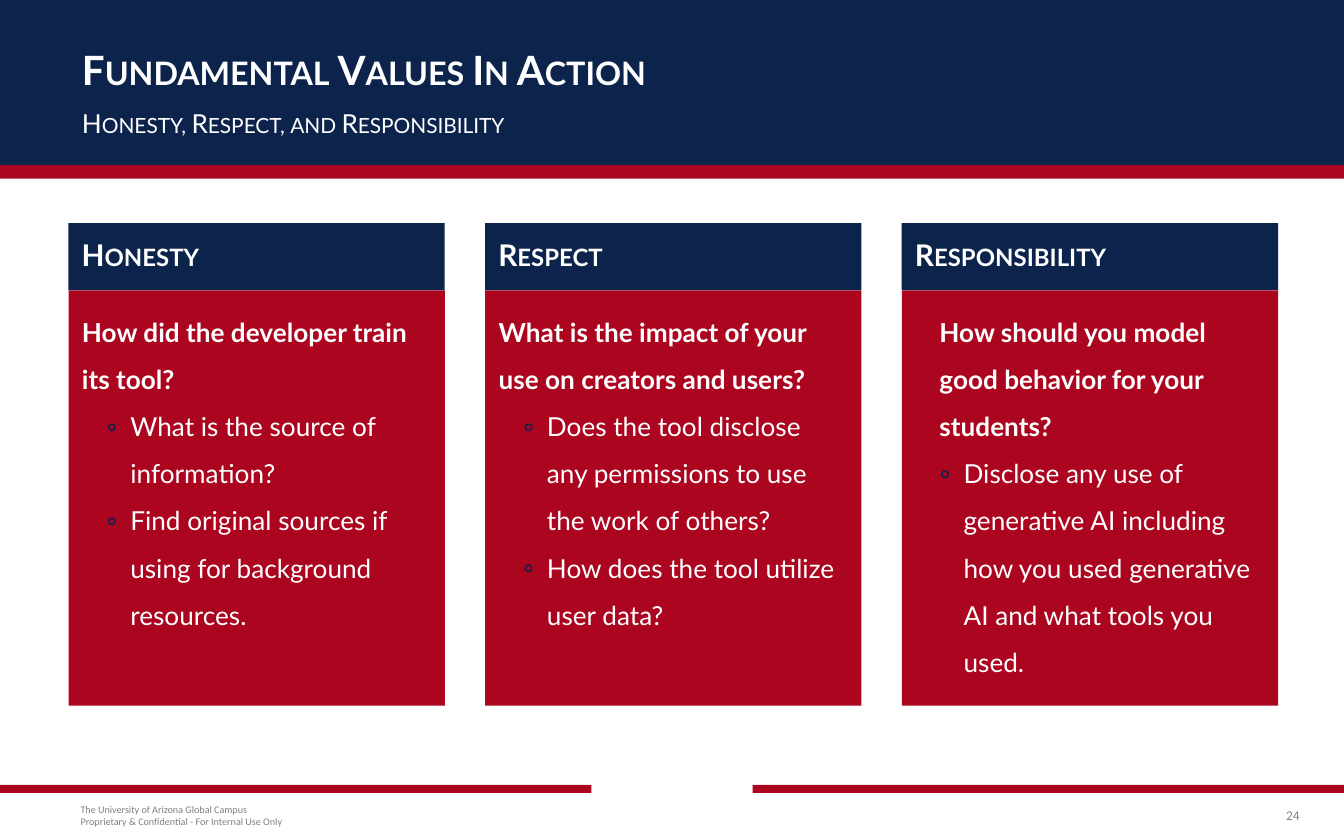
import pptx
import pptx.util
import pptx.dml.color
import pptx.enum.shapes
import pptx.enum.text
import pptx.oxml
import pptx.oxml.ns

Inches, Pt = pptx.util.Inches, pptx.util.Pt
ALIGN, ANCHOR = pptx.enum.text.PP_ALIGN, pptx.enum.text.MSO_ANCHOR

# Content
TITLE = "Fundamental Values In Action"
SUBTITLE = "Honesty, Respect, and Responsibility"
# heading, question, points, indent of the question
COLUMNS = [
    ("Honesty", "How did the developer train its tool?",
     ["What is the source of information?",
      "Find original sources if using for background resources."], 0),
    ("Respect", "What is the impact of your use on creators and users?",
     ["Does the tool disclose any permissions to use the work of others?",
      "How does the tool utilize user data?"], 0),
    ("Responsibility", "How should you model good behavior for your students?",
     ["Disclose any use of generative AI including how you used generative AI "
      "and what tools you used."], 0.18),
]
FOOTER = ("The University of Arizona Global Campus\v"
          "Proprietary & Confidential - For Internal Use Only")
PAGE = "24"

# Format
COLORS = {"navy": "0C234B", "red": "AB0520", "white": "FFFFFF", "gray": "808080"}
STYLES = {
    "title": {"name": "Lato", "size": Pt(21.6), "bold": True},
    "subtitle": {"name": "Lato", "size": Pt(14), "bold": False},
    "heading": {"name": "Lato", "size": Pt(16), "bold": True},
    "question": {"name": "Lato", "size": Pt(14), "bold": True},
    "point": {"name": "Lato", "size": Pt(14), "bold": False},
    "footer": {"name": "Calibri", "size": Pt(5.4)},
    "page": {"name": "Calibri", "size": Pt(7.2)},
}
SMALL_CAPS = ("title", "subtitle", "heading")

# Grid
W, H = 10, 6.25
LEFT, COL_W, PITCH = 0.51, 2.8, 3.1
HEAD_TOP, HEAD_H, LIST_H = 1.66, 0.5, 3.09
HANG = 0.18


def rgb(name):
    return pptx.dml.color.RGBColor.from_string(COLORS[name])


def place(sp, x, y, w, h):
    for key, value in zip(("left", "top", "width", "height"), (x, y, w, h)):
        setattr(sp, key, Inches(value))


def add_rect(x, y, w, h, color):
    sp = slide.shapes.add_shape(pptx.enum.shapes.MSO_SHAPE.RECTANGLE,
                                *map(Inches, (x, y, w, h)))
    sp.shadow.inherit = False
    sp.fill.solid()
    sp.fill.fore_color.rgb = rgb(color)
    sp.line.fill.background()
    return sp


def set_frame(sp, anchor, insets):
    tf = sp.text_frame
    tf.word_wrap = True
    tf.auto_size = pptx.enum.text.MSO_AUTO_SIZE.NONE
    tf.vertical_anchor = anchor
    for side, value in zip(("left", "top", "right", "bottom"), insets):
        setattr(tf, "margin_" + side, Inches(value))
    return tf


def write(p, text, style, color="white", spacing=0.9, indent=0, bullet=None,
          align=ALIGN.LEFT):
    pPr = p._p.get_or_add_pPr()
    pPr.set("marL", str(Inches(indent)))
    pPr.set("indent", str(Inches(-HANG if bullet else 0)))
    ns = pptx.oxml.ns.nsdecls("a")
    marks = [f"<a:buNone {ns}/>"]
    if bullet:
        marks = [f'<a:buClr {ns}><a:srgbClr val="{COLORS["navy"]}"/></a:buClr>',
                 f'<a:buSzPct {ns} val="110000"/>',
                 f'<a:buFont {ns} typeface="Lato"/>',
                 f'<a:buChar {ns} char="{bullet}"/>']
    for mark in marks:
        pPr.append(pptx.oxml.parse_xml(mark))
    p.alignment = align
    p.line_spacing = spacing
    p.space_before = p.space_after = Pt(0)
    p.text = text
    for r in p.runs:
        for key, value in STYLES[style].items():
            setattr(r.font, key, value)
        r.font.color.rgb = rgb(color)
        if style in SMALL_CAPS:
            r._r.get_or_add_rPr().set("cap", "small")


prs = pptx.Presentation()
prs.slide_width, prs.slide_height = Inches(W), Inches(H)
slide = prs.slides.add_slide(prs.slide_layouts.get_by_name("Comparison"))
title, subtitle, *lists = slide.placeholders

# Header band and split footer rule, behind the text
bands = [(0, 0, W, 1.33, "red"), (0, 0, W, 1.23, "navy"),
         (0, 5.84, 4.4, 0.06, "red"), (5.6, 5.84, 4.4, 0.06, "red")]
for i, band in enumerate(bands):
    sp = add_rect(*band)
    slide.shapes._spTree.insert(2 + i, sp._element)

# Title and subtitle
for sp, text, style, y, h in [(title, TITLE, "title", 0.34, 0.4),
                              (subtitle, SUBTITLE, "subtitle", 0.78, 0.3)]:
    place(sp, LEFT, y, 8.99, h)
    tf = set_frame(sp, ANCHOR.MIDDLE, [0.1] * 4)
    write(tf.paragraphs[0], text, style)

# Columns: heading above a list
for i, (sp, column) in enumerate(zip(lists, COLUMNS)):
    heading, question, points, indent = column
    x = LEFT + i * PITCH
    head = add_rect(x, HEAD_TOP, COL_W, HEAD_H, "navy")
    tf = set_frame(head, ANCHOR.MIDDLE, (0.1, 0.05, 0.1, 0.05))
    write(tf.paragraphs[0], heading, "heading")

    place(sp, x, HEAD_TOP + HEAD_H, COL_W, LIST_H)
    sp.fill.solid()
    sp.fill.fore_color.rgb = rgb("red")
    tf = set_frame(sp, ANCHOR.TOP, (0.1, 0.08, 0.16, 0.08))
    write(tf.paragraphs[0], question, "question", spacing=1.5, indent=indent)
    for point in points:
        p = tf.add_paragraph()
        p.level = 1
        write(p, point, "point", spacing=1.5, indent=2 * HANG, bullet="◦")

# Footer and page number
for text, style, x, w, inset, align in [
        (FOOTER, "footer", LEFT, 2.06, 0.09, ALIGN.LEFT),
        (PAGE, "page", 9.16, 0.51, 0, ALIGN.RIGHT)]:
    sp = slide.shapes.add_textbox(*map(Inches, (x, 5.94, w, 0.25)))
    tf = set_frame(sp, ANCHOR.MIDDLE, (inset, 0, 0, 0))
    write(tf.paragraphs[0], text, style, "gray", 1.0, align=align)

prs.save("out.pptx")
